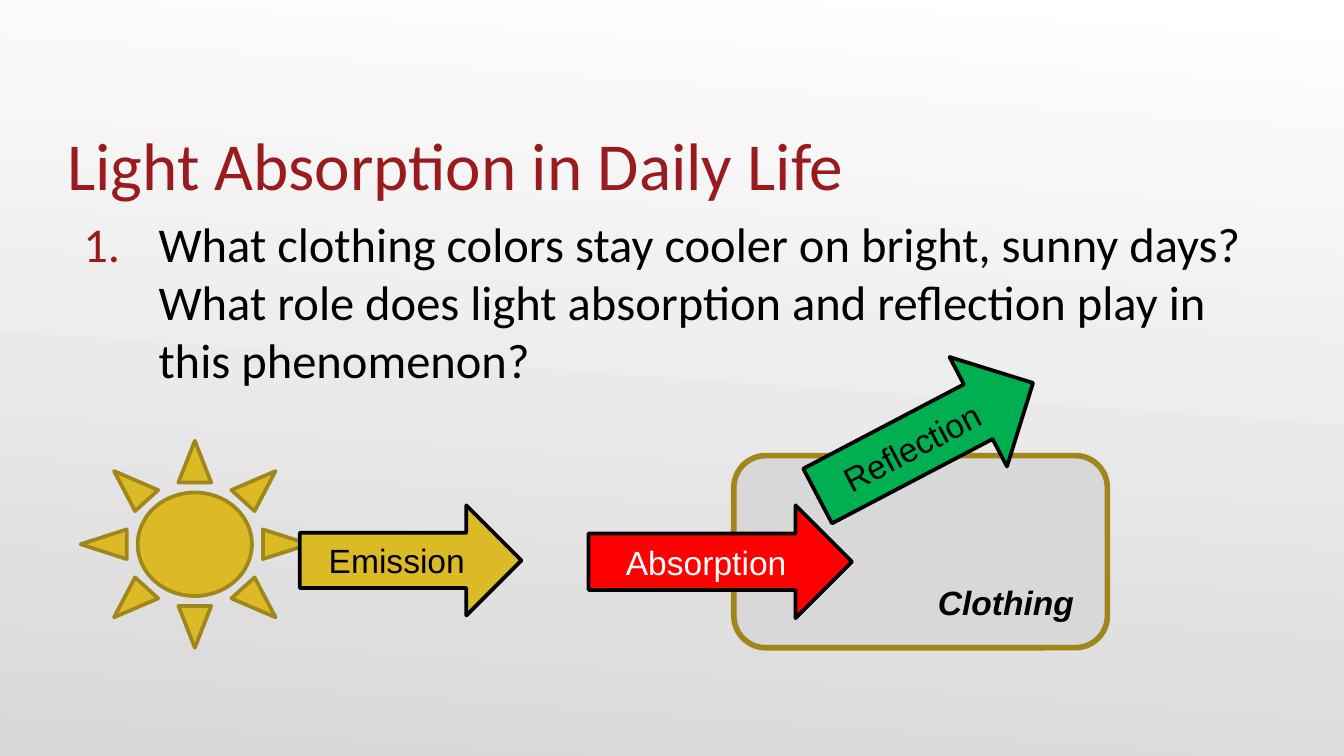
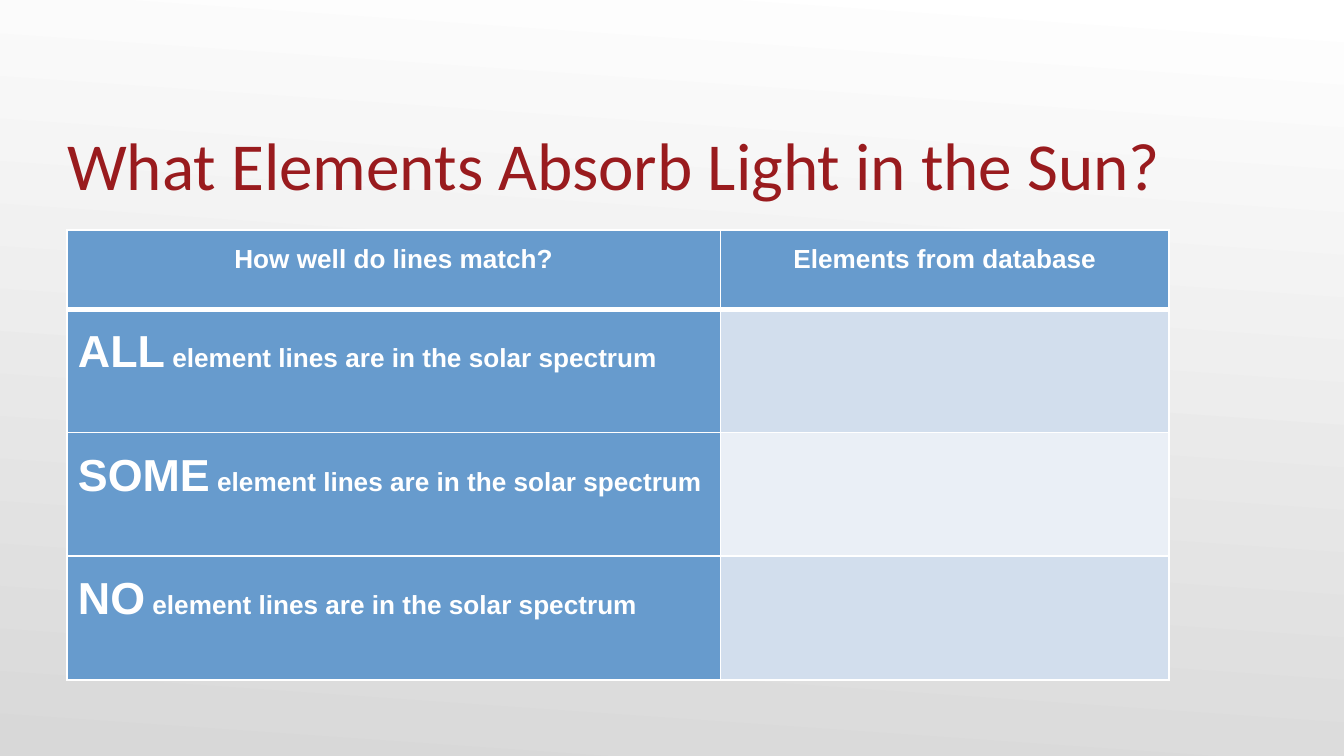
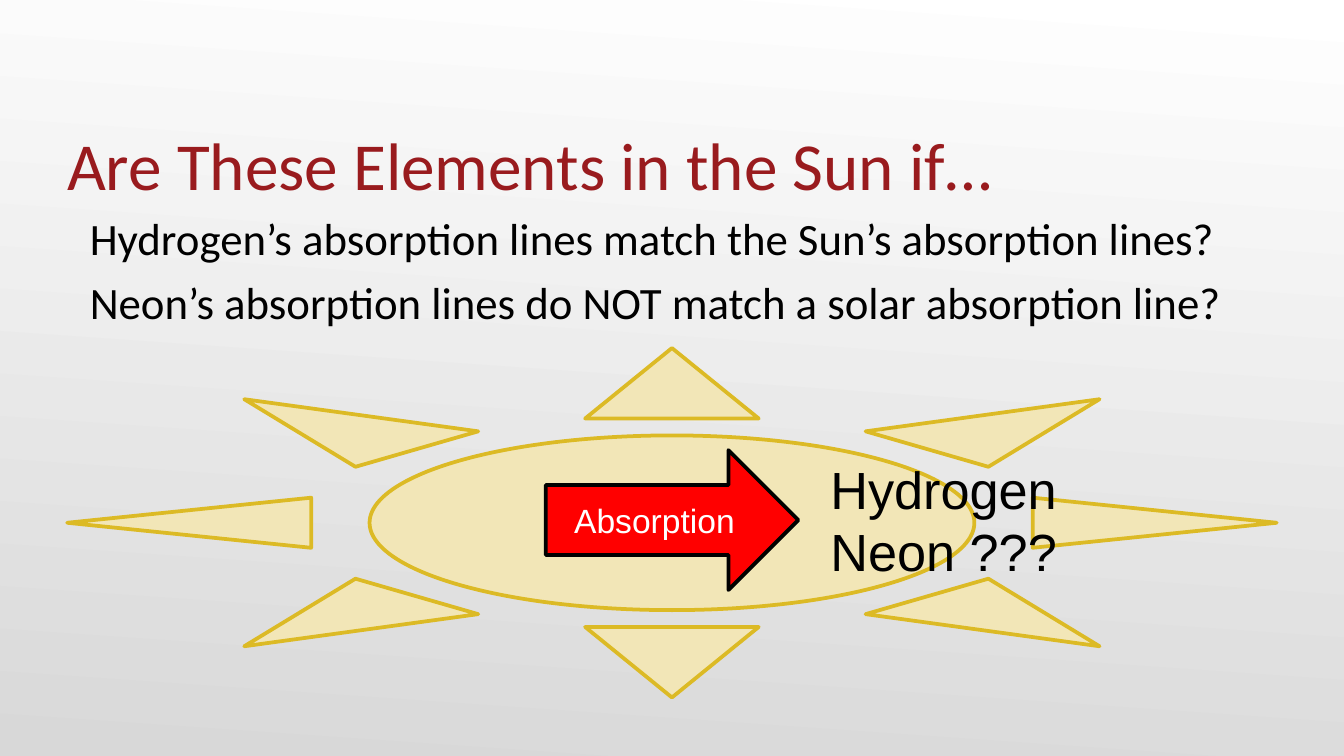
from dataclasses import dataclass
from typing import Optional

from lxml.etree import SubElement
from pptx import Presentation
from pptx.dml.color import RGBColor
from pptx.enum.shapes import MSO_SHAPE
from pptx.enum.text import MSO_ANCHOR, MSO_AUTO_SIZE, PP_ALIGN
from pptx.oxml.ns import qn
from pptx.util import Inches, Pt

WIDTH = Inches(10)
HEIGHT = WIDTH * 9 // 16
COLUMN = WIDTH / 100
ROW = HEIGHT / 56.25

WHITE = RGBColor(0xFF, 0xFF, 0xFF)
BLACK = RGBColor(0x00, 0x00, 0x00)
GREY = RGBColor(0xD8, 0xD8, 0xD8)
CRIMSON = RGBColor(0x99, 0x1B, 0x1E)
GOLD = RGBColor(0xDC, 0xBA, 0x25)
DARK_GOLD = RGBColor(0xA0, 0x87, 0x1B)
PALE_GOLD = RGBColor(0xF2, 0xE6, 0xB7)
RED = RGBColor(0xFF, 0x00, 0x00)
GREEN = RGBColor(0x00, 0xB0, 0x50)
BLUE = RGBColor(0x67, 0x9B, 0xCD)
BAND_DARK = RGBColor(0xD2, 0xDE, 0xED)
BAND_LIGHT = RGBColor(0xEA, 0xEF, 0xF6)

HEADING_FONT = "Calibri"
LABEL_FONT = "Arial"
MARGIN = 5
CONTENT_COLUMNS = 90


@dataclass(frozen=True)
class Area:
    """A rectangle in grid columns and rows."""
    column: float
    row: float
    columns: float
    rows: float

    def emu(self) -> tuple[int, int, int, int]:
        return (round(self.column * COLUMN), round(self.row * ROW),
                round(self.columns * COLUMN), round(self.rows * ROW))


@dataclass(frozen=True)
class TextStyle:
    size: float
    font: str = LABEL_FONT
    color: RGBColor = BLACK
    bold: bool = False
    italic: bool = False


@dataclass(frozen=True)
class Figure:
    kind: MSO_SHAPE
    area: Area
    fill: RGBColor
    line: RGBColor
    line_width: float = 2
    label: str = ""
    label_color: RGBColor = BLACK
    rotation: float = 0


@dataclass(frozen=True)
class TextBlock:
    area: Area
    lines: tuple[str, ...]
    style: TextStyle
    insets: tuple[float, float, float, float] = (0.1, 0.05, 0.1, 0.05)
    anchor: MSO_ANCHOR = MSO_ANCHOR.TOP
    grows: bool = False
    left_indent: float = 0
    first_indent: float = 0
    gap: float = 0
    number_color: Optional[RGBColor] = None


def arrow(area: Area, fill: RGBColor, label: str,
          label_color: RGBColor = BLACK, rotation: float = 0) -> Figure:
    return Figure(MSO_SHAPE.RIGHT_ARROW, area, fill, BLACK,
                  label=label, label_color=label_color, rotation=rotation)


TITLE_STYLE = TextStyle(36, HEADING_FONT, CRIMSON)
TITLE_AREA = Area(MARGIN, 5.8, CONTENT_COLUMNS, 9.4)

CLOTHING = Figure(MSO_SHAPE.ROUNDED_RECTANGLE, Area(54.6, 33.9, 27.8, 14.3),
                  GREY, DARK_GOLD, line_width=3)
CLOTHING_LABEL = TextBlock(Area(68.8, 42.8, 12.3, 4), ("Clothing",),
                           TextStyle(18, bold=True, italic=True), grows=True)
SMALL_SUN = Figure(MSO_SHAPE.SUN, Area(6, 32.8, 17, 15.4), GOLD, DARK_GOLD)
EMISSION = arrow(Area(22.3, 37.6, 16.5, 8.2), GOLD, "Emission")
ABSORPTION = arrow(Area(43.8, 37.6, 19.6, 8.4), RED, "Absorption", WHITE)
REFLECTION = arrow(Area(59.8, 28.1, 18.1, 9.2), GREEN, "Reflection", rotation=332.3)
CLOTHING_QUESTION = TextBlock(
    Area(MARGIN, 15.9, CONTENT_COLUMNS, 36),
    ("What clothing colors stay cooler on bright, sunny days? "
     "What role does light absorption and reflection play in this phenomenon?",),
    TextStyle(26, HEADING_FONT), insets=(0.05, 0, 0.05, 0),
    left_indent=0.63, first_indent=-0.56, number_color=CRIMSON)

TABLE_AREA = Area(MARGIN, 17.1, 82, 33.5)
TABLE_COLUMNS = (48.6, 33.4)
TABLE_ROWS = (5.9, 9.2, 9.2, 9.2)
TABLE_HEADINGS = ("How well do lines match?", "Elements from database")
MATCH_LEVELS = ("ALL", "SOME", "NO")
TABLE_STYLE = TextStyle(14, color=WHITE, bold=True)
LEVEL_STYLE = TextStyle(24, color=WHITE, bold=True)

SUN_QUESTIONS = TextBlock(
    Area(MARGIN, 15.2, CONTENT_COLUMNS, 36),
    ("Hydrogen’s absorption lines match the Sun’s absorption lines?",
     "Neon’s absorption lines do NOT match a solar absorption line?"),
    TextStyle(24, HEADING_FONT), left_indent=0.07, gap=5.2)
LARGE_SUN = Figure(MSO_SHAPE.SUN, Area(MARGIN, 25.9, CONTENT_COLUMNS, 26),
                   PALE_GOLD, GOLD)
SUN_ABSORPTION = arrow(Area(40.6, 33.5, 18.8, 10.4), RED, "Absorption", WHITE)
SUN_ELEMENTS = TextBlock(Area(60.8, 33.5, 19.9, 10.4), ("Hydrogen", "Neon ???"),
                         TextStyle(28), grows=True)


def style_font(font, style: TextStyle) -> None:
    font.name = style.font
    font.size = Pt(style.size)
    font.bold = style.bold
    font.italic = style.italic
    font.color.rgb = style.color


def style_runs(para, *styles: TextStyle) -> None:
    for span, style in zip(para.runs, styles):
        style_font(span.font, style)


def number_paragraph(properties, color: RGBColor) -> None:
    bullet_color = SubElement(properties, qn("a:buClr"))
    SubElement(bullet_color, qn("a:srgbClr"), val=str(color))
    SubElement(properties, qn("a:buFont"), typeface=HEADING_FONT)
    SubElement(properties, qn("a:buAutoNum"), type="arabicPeriod")


def add_text(page, block: TextBlock) -> None:
    frame = page.shapes.add_textbox(*block.area.emu()).text_frame
    frame.word_wrap = True
    frame.vertical_anchor = block.anchor
    if block.grows:
        frame.auto_size = MSO_AUTO_SIZE.SHAPE_TO_FIT_TEXT
    (frame.margin_left, frame.margin_top,
     frame.margin_right, frame.margin_bottom) = map(Inches, block.insets)
    frame.text = "\n".join(block.lines)
    for index, para in enumerate(frame.paragraphs):
        properties = para._p.get_or_add_pPr()
        properties.set("marL", str(Inches(block.left_indent)))
        properties.set("indent", str(Inches(block.first_indent)))
        if index and block.gap:
            para.space_before = Pt(block.gap)
        if block.number_color is not None:
            number_paragraph(properties, block.number_color)
        style_runs(para, block.style)


def add_figure(page, figure: Figure) -> None:
    shape = page.shapes.add_shape(figure.kind, *figure.area.emu())
    shape.shadow.inherit = False
    shape.rotation = figure.rotation
    shape.fill.solid()
    shape.fill.fore_color.rgb = figure.fill
    shape.line.color.rgb = figure.line
    shape.line.width = Pt(figure.line_width)
    if figure.label:
        frame = shape.text_frame
        frame.vertical_anchor = MSO_ANCHOR.MIDDLE
        frame.text = figure.label
        para = frame.paragraphs[0]
        para.alignment = PP_ALIGN.CENTER
        style_runs(para, TextStyle(18, color=figure.label_color))


def add_page(deck, title: str):
    """Add a blank slide with the shared gradient and title."""
    page = deck.slides.add_slide(deck.slide_layouts[6])
    fill = page.background.fill
    fill.gradient()
    fill.gradient_angle = 360 - 94
    for stop, color in zip(fill.gradient_stops, (WHITE, GREY)):
        stop.color.rgb = color
    add_text(page, TextBlock(TITLE_AREA, (title,), TITLE_STYLE,
                             insets=(0, 0.05, 0, 0), anchor=MSO_ANCHOR.BOTTOM))
    return page


def border_cell(cell, top: float, bottom: float) -> None:
    properties = cell._tc.get_or_add_tcPr()
    for side, width in (("L", 1), ("R", 1), ("T", top), ("B", bottom)):
        line = SubElement(properties, qn(f"a:ln{side}"), w=str(Pt(width)))
        fill = SubElement(line, qn("a:solidFill"))
        SubElement(fill, qn("a:srgbClr"), val=str(WHITE))


def style_cell(cell, row: int, column: int) -> None:
    border_cell(cell, top=3 if row == 1 else 1, bottom=3 if row == 0 else 1)
    cell.fill.solid()
    if row == 0 or column == 0:
        cell.fill.fore_color.rgb = BLUE
    else:
        cell.fill.fore_color.rgb = BAND_DARK if row % 2 else BAND_LIGHT
    cell.margin_left = cell.margin_right = Inches(0.08)
    cell.margin_top = cell.margin_bottom = Inches(0.08)
    cell.text_frame.paragraphs[0].line_spacing = 1.15


def add_match_table(page) -> None:
    table = page.shapes.add_table(len(TABLE_ROWS), len(TABLE_COLUMNS),
                                  *TABLE_AREA.emu()).table
    for column, columns in zip(table.columns, TABLE_COLUMNS):
        column.width = round(columns * COLUMN)
    for row, rows in zip(table.rows, TABLE_ROWS):
        row.height = round(rows * ROW)
    for row in range(len(TABLE_ROWS)):
        for column in range(len(TABLE_COLUMNS)):
            style_cell(table.cell(row, column), row, column)
    for column, heading in enumerate(TABLE_HEADINGS):
        para = table.cell(0, column).text_frame.paragraphs[0]
        para.text = heading
        para.alignment = PP_ALIGN.CENTER
        style_runs(para, TABLE_STYLE)
    for row, level in enumerate(MATCH_LEVELS, start=1):
        para = table.cell(row, 0).text_frame.paragraphs[0]
        para.text = level
        para.add_run().text = " element lines are in the solar spectrum"
        style_runs(para, LEVEL_STYLE, TABLE_STYLE)


def add_daily_life_page(deck) -> None:
    page = add_page(deck, "Light Absorption in Daily Life")
    add_figure(page, CLOTHING)
    add_text(page, CLOTHING_QUESTION)
    for figure in (SMALL_SUN, EMISSION, ABSORPTION):
        add_figure(page, figure)
    add_text(page, CLOTHING_LABEL)
    add_figure(page, REFLECTION)


def add_elements_page(deck) -> None:
    page = add_page(deck, "What Elements Absorb Light in the Sun?")
    add_match_table(page)


def add_sun_page(deck) -> None:
    page = add_page(deck, "Are These Elements in the Sun if…")
    add_text(page, SUN_QUESTIONS)
    add_figure(page, LARGE_SUN)
    add_figure(page, SUN_ABSORPTION)
    add_text(page, SUN_ELEMENTS)


def main() -> None:
    deck = Presentation()
    deck.slide_width = WIDTH
    deck.slide_height = HEIGHT
    add_daily_life_page(deck)
    add_elements_page(deck)
    add_sun_page(deck)
    deck.save("out.pptx")


if __name__ == "__main__":
    main()
